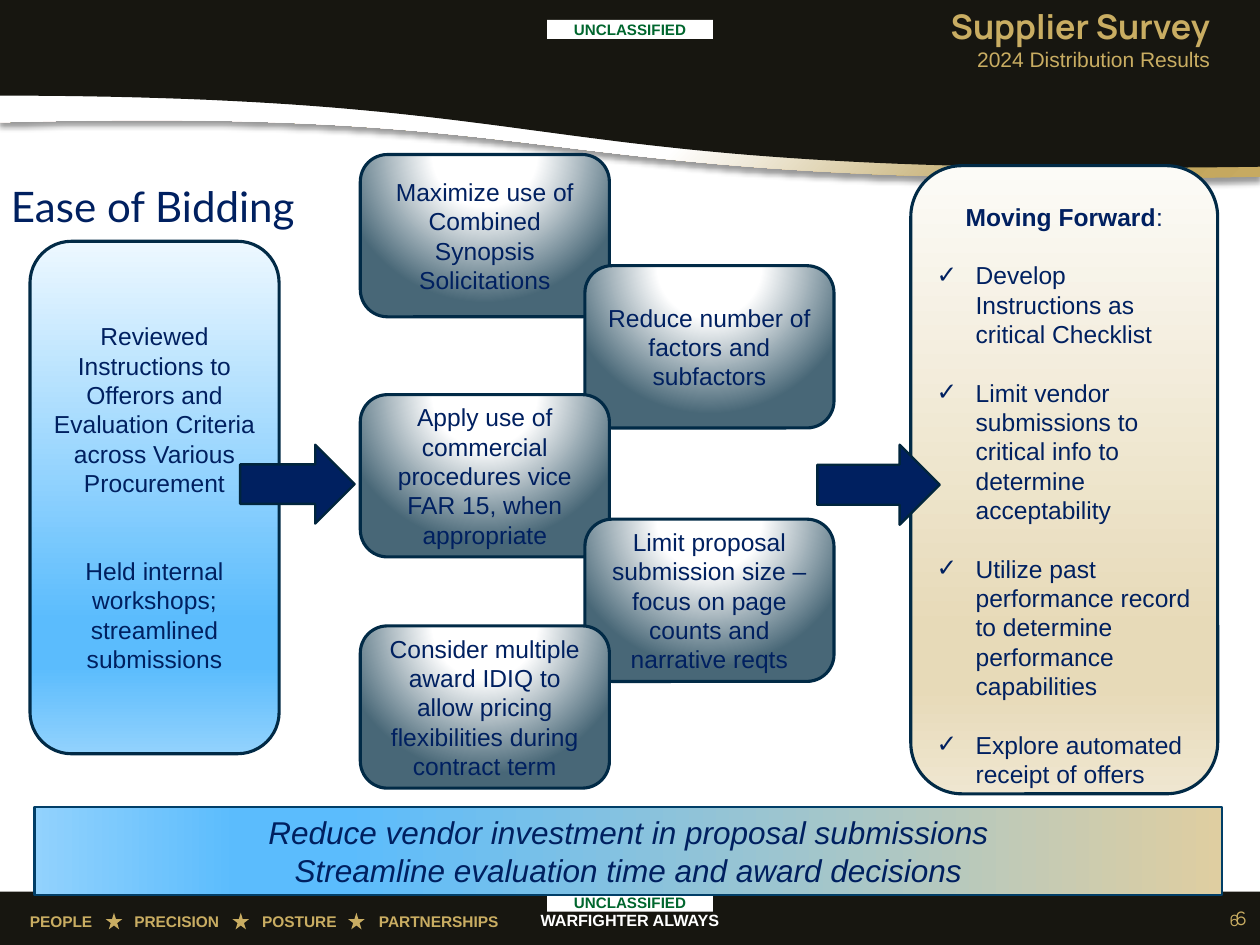
"""Build the Supplier Survey slide on ease of bidding."""
from dataclasses import dataclass
from typing import Optional

from lxml.etree import SubElement
from pptx import Presentation
from pptx.dml.color import RGBColor
from pptx.enum.shapes import MSO_SHAPE as SHAPE
from pptx.enum.text import MSO_ANCHOR as ANCHOR, MSO_AUTO_SIZE as AUTO, PP_ALIGN as ALIGN
from pptx.oxml.ns import qn
from pptx.util import Emu, Pt

PX = 9144
WHITE = RGBColor(0xFF, 0xFF, 0xFF)
BLACK = RGBColor(0x17, 0x16, 0x10)
GOLD = RGBColor(0xC9, 0xAD, 0x62)
GREEN = RGBColor(0x00, 0x66, 0x2E)
NAVY = RGBColor(0x00, 0x20, 0x60)
EDGE = RGBColor(0x01, 0x2A, 0x46)
BANNER_EDGE = RGBColor(0x01, 0x3E, 0x67)
ARROW_EDGE = RGBColor(0x01, 0x25, 0x3D)
SKY = RGBColor(0x5B, 0xBC, 0xFD)
PALE_SKY = RGBColor(0x92, 0xD2, 0xFD)
ICE = RGBColor(0xED, 0xF8, 0xFF)
SLATE = RGBColor(0x48, 0x67, 0x77)
SAND = RGBColor(0xE7, 0xDA, 0xB8)
CREAM = RGBColor(0xFC, 0xFB, 0xF7)
PALE_SAND = RGBColor(0xEF, 0xE6, 0xD0)
TAN = RGBColor(0xDF, 0xCE, 0xA1)
BRONZE = RGBColor(0xB9, 0x9E, 0x55)
BRIGHT_GOLD = RGBColor(0xC7, 0xAA, 0x61)


@dataclass(frozen=True)
class Gradient:
    stops: tuple
    angle: int = 0
    focus: Optional[tuple] = None


@dataclass(frozen=True)
class Style:
    size: float
    color: RGBColor
    font: str = "Arial"
    bold: bool = False
    italic: bool = False
    align: ALIGN = ALIGN.CENTER


@dataclass(frozen=True)
class Box:
    x: int
    y: int
    w: int
    h: int

    def emu(self) -> tuple:
        return tuple(Emu(v * PX) for v in (self.x, self.y, self.w, self.h))


@dataclass(frozen=True)
class Panel:
    box: Box
    lines: tuple
    fill: Gradient
    gap: float = 0


BODY = Style(15.9, NAVY)
BANNER_TEXT = Style(20.4, NAVY, italic=True)
MARKING = Style(9.8, GREEN, bold=True)
MOTTO = Style(10.5, WHITE, bold=True)
VALUE = Style(10, GOLD, bold=True, align=ALIGN.LEFT)
HEADING = Style(27.2, NAVY, "Lato", align=ALIGN.LEFT)
TITLE = Style(22, GOLD, "Manrope", bold=True, align=ALIGN.RIGHT)
SUBTITLE = Style(13.6, GOLD, align=ALIGN.RIGHT)

BLUE = Gradient(((0, ICE), (74, SKY), (83, SKY), (100, PALE_SKY)), 90)
BEIGE = Gradient(((0, CREAM), (74, SAND), (83, SAND), (100, PALE_SAND)), 90)
GLOW = Gradient(((0, WHITE), (35, WHITE), (100, SLATE)), focus=(50, -80, 50, 180))
BANNER = Gradient(((0, TAN), (74, SKY), (83, SKY), (100, PALE_SKY)), 180)
RIBBON = Gradient(((0, WHITE), (55, WHITE), (84, BRONZE), (100, BRIGHT_GOLD)), focus=(0, 0, 100, 100))

ACTIONS = (
    (324, 139, "Maximize use of Combined Synopsis Solicitations"),
    (526, 239, "Reduce number of factors and subfactors"),
    (324, 355, "Apply use of commercial procedures vice FAR 15, when appropriate"),
    (526, 467, "Limit proposal submission size – focus on page counts and narrative reqts"),
    (324, 563, "Consider multiple award IDIQ to allow pricing flexibilities during contract term"),
)
REVIEWED = Panel(Box(27, 217, 224, 461), (
    "Reviewed Instructions to Offerors and Evaluation Criteria",
    "across Various Procurement",
    "Held internal workshops; streamlined submissions"), BLUE)
FORWARD = Panel(Box(819, 149, 276, 565), (
    "Moving Forward",
    "Develop Instructions as critical Checklist",
    "Limit vendor submissions to critical info to determine acceptability",
    "Utilize past performance record to determine performance capabilities",
    "Explore automated receipt of offers"), BEIGE, 19)


def style_run(r, style: Style) -> None:
    r.font.name, r.font.size = style.font, Pt(style.size)
    r.font.bold, r.font.italic = style.bold, style.italic
    r.font.color.rgb = style.color


def write(sp, lines: tuple, style: Style, gap: float = 0, pitch: Optional[float] = None) -> None:
    tf = sp.text_frame
    tf.word_wrap, tf.auto_size = True, AUTO.NONE
    for i, line in enumerate(lines):
        p = tf.add_paragraph() if i else tf.paragraphs[0]
        p.text, p.alignment = line, style.align
        if i and gap:
            p.space_before = Pt(gap)
        if pitch:
            p.line_spacing = Pt(pitch)
        for r in p.runs:
            style_run(r, style)


def label(s, box: Box, text: str, style: Style):
    sp = s.shapes.add_textbox(*box.emu())
    write(sp, (text,), style)
    return sp


def paint(sp, fill, edge: Optional[RGBColor] = None, width: float = 0) -> None:
    sp.shadow.inherit = False
    if isinstance(fill, Gradient):
        sp.fill.gradient()
        grad = sp._element.spPr.find(qn("a:gradFill"))
        grad.clear()
        stops = SubElement(grad, qn("a:gsLst"))
        for pos, color in fill.stops:
            gs = SubElement(stops, qn("a:gs"), pos=str(pos * 1000))
            SubElement(gs, qn("a:srgbClr"), val=str(color))
        if fill.focus:
            path = SubElement(grad, qn("a:path"), path="circle")
            sides = {k: str(v * 1000) for k, v in zip("ltrb", fill.focus)}
            SubElement(path, qn("a:fillToRect"), sides)
        else:
            SubElement(grad, qn("a:lin"), ang=str(fill.angle * 60000), scaled="0")
    else:
        sp.fill.solid()
        sp.fill.fore_color.rgb = fill
    if edge is None:
        sp.line.fill.background()
    else:
        sp.line.color.rgb, sp.line.width = edge, Pt(width)


def shape(s, kind: SHAPE, box: Box, fill, edge: Optional[RGBColor] = None, width: float = 0):
    sp = s.shapes.add_shape(kind, *box.emu())
    paint(sp, fill, edge, width)
    return sp


def panel(s, item: Panel):
    sp = shape(s, SHAPE.ROUNDED_RECTANGLE, item.box, item.fill, EDGE, 2)
    write(sp, item.lines, BODY, item.gap, 19)
    sp.text_frame.vertical_anchor = ANCHOR.MIDDLE
    return sp


def wave(s, top: int, start: int, c1: tuple, c2: tuple, end: tuple, fill):
    n = 60
    curve = []
    for i in range(1, n + 1):
        t = i / n
        u = 1 - t
        weights = (u ** 3, 3 * u * u * t, 3 * u * t * t, t ** 3)
        curve.append(tuple(sum(k * q[a] for k, q in zip(weights, ((0, start), c1, c2, end)))
                           for a in (0, 1)))
    points = [(0, top), (0, start)] + curve
    builder = s.shapes.build_freeform(end[0] * PX, top * PX)
    builder.add_line_segments([(round(x * PX), round(y * PX)) for x, y in points], close=True)
    sp = builder.convert_to_shape()
    paint(sp, fill)
    return sp


def draw_frame(s) -> None:
    shape(s, SHAPE.RECTANGLE, Box(0, 802, 1133, 48), BLACK)
    label(s, Box(447, 814, 239, 28), "WARFIGHTER ALWAYS", MOTTO)
    for x, text in ((17, "PEOPLE"), (111, "PRECISION"), (226, "POSTURE"), (331, "PARTNERSHIPS")):
        label(s, Box(x, 815, 147, 28), text, VALUE)
    for x in (95, 209, 313):
        shape(s, SHAPE.STAR_5_POINT, Box(x, 821, 15, 15), GOLD)
    ribbon = wave(s, 59, 110, (549, 95), (454, 172), (1133, 159), RIBBON)
    effects = ribbon._element.spPr.find(qn("a:effectLst"))
    shadow = SubElement(effects, qn("a:outerShdw"), blurRad=str(Pt(4)), dist=str(Pt(3)),
                        dir="5400000", algn="t", rotWithShape="0")
    color = SubElement(shadow, qn("a:srgbClr"), val="000000")
    SubElement(color, qn("a:alpha"), val="40000")
    wave(s, 0, 86, (546, 87), (452, 160), (1133, 150), BLACK)
    for y in (18, 803):
        sp = shape(s, SHAPE.RECTANGLE, Box(492, y, 149, 17), WHITE)
        write(sp, ("UNCLASSIFIED",), MARKING)
        sp.text_frame.margin_top = sp.text_frame.margin_bottom = 0
    for box, size in ((Box(1089, 803, 42, 45), 12), (Box(1025, 814, 99, 27), 10)):
        sp = label(s, box, "6", Style(size, GOLD, "Manrope", align=ALIGN.RIGHT))
        sp.text_frame.vertical_anchor = ANCHOR.MIDDLE


def draw_title(s) -> None:
    sp = s.shapes.title
    sp.element.getparent().append(sp.element)
    sp.left, sp.top, sp.width, sp.height = Box(266, 11, 832, 47).emu()
    write(sp, ("Supplier Survey\v2024 Distribution Results",), TITLE)
    sp.text_frame.vertical_anchor = ANCHOR.MIDDLE
    style_run(sp.text_frame.paragraphs[0].runs[1], SUBTITLE)


def draw_forward(s) -> None:
    tf = panel(s, FORWARD).text_frame
    tf.vertical_anchor, tf.margin_top = ANCHOR.TOP, Emu(19 * PX)
    heading, *points = tf.paragraphs
    heading.runs[0].font.bold = True
    r = heading.add_run()
    r.text = ":"
    style_run(r, BODY)
    for p in points:
        p.alignment = ALIGN.LEFT
        pPr = p._p.get_or_add_pPr()
        pPr.set("marL", str(35 * PX))
        pPr.set("indent", str(-35 * PX))
        SubElement(pPr, qn("a:buFont"), typeface="Arial")
        SubElement(pPr, qn("a:buChar"), char="✓")


def main() -> None:
    prs = Presentation()
    prs.slide_width, prs.slide_height = Emu(1133 * PX), Emu(850 * PX)
    s = prs.slides.add_slide(prs.slide_layouts[5])
    draw_frame(s)
    draw_title(s)
    banner = shape(s, SHAPE.RECTANGLE, Box(31, 726, 1068, 79), BANNER, BANNER_EDGE, 1.5)
    write(banner, ("Reduce vendor investment in proposal submissions",
                   "Streamline evaluation time and award decisions"), BANNER_TEXT, pitch=24.5)
    label(s, Box(0, 157, 385, 56), "Ease of Bidding", HEADING)
    reviewed = panel(s, REVIEWED)
    reviewed.text_frame.paragraphs[-1].space_before = Pt(38)
    draw_forward(s)
    for x, y, text in ACTIONS:
        panel(s, Panel(Box(x, y, 224, 146), (text,), GLOW))
    for box in (Box(735, 400, 110, 72), Box(216, 400, 103, 71)):
        shape(s, SHAPE.RIGHT_ARROW, box, NAVY, ARROW_EDGE, 1.5)
    prs.save("out.pptx")


if __name__ == "__main__":
    main()
